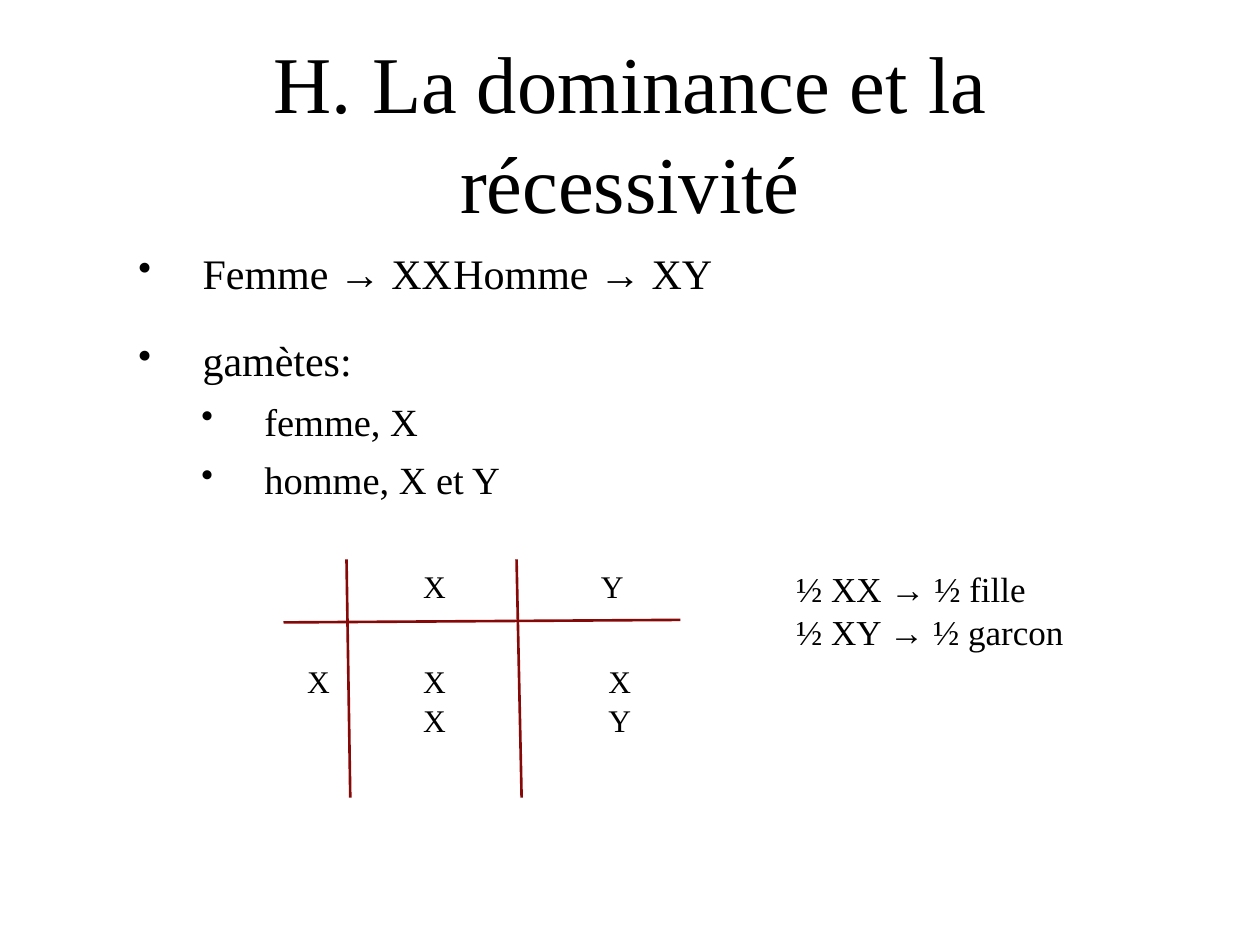
from lxml import etree
from pptx import Presentation
from pptx.dml.color import RGBColor
from pptx.enum.shapes import MSO_CONNECTOR as Connector
from pptx.enum.text import MSO_ANCHOR as Anchor, PP_ALIGN as Align
from pptx.oxml.ns import qn
from pptx.util import Inches, Pt

FONT = "Times New Roman"
BLACK = "000000"
DARK_RED = "860908"


def color(value):
    return RGBColor.from_string(value)


def set_bullet(paragraph, left, hanging):
    properties = paragraph._p.get_or_add_pPr()
    properties.set("marL", str(Inches(left)))
    properties.set("indent", str(-Inches(hanging)))
    etree.SubElement(properties, qn("a:buSzPct")).set("val", "90000")
    etree.SubElement(properties, qn("a:buChar")).set("char", "•")


def format_paragraph(paragraph, size, **formats):
    formats = {"line_spacing": 1.04, **formats}
    for name, value in formats.items():
        setattr(paragraph, name, value)
    for name, value in {"name": FONT, "size": Pt(size)}.items():
        setattr(paragraph.font, name, value)
    paragraph.font.color.rgb = color(BLACK)


def add_frame(slide, left, top, width, height, anchor=Anchor.TOP):
    box = slide.shapes.add_textbox(*map(Inches, (left, top, width, height)))
    frame = box.text_frame
    frame.word_wrap = True
    frame.vertical_anchor = anchor
    return frame


def add_text(slide, place, lines, size, anchor=Anchor.TOP, **formats):
    frame = add_frame(slide, *place, anchor=anchor)
    frame.text = "\n".join(lines)
    for paragraph in frame.paragraphs:
        format_paragraph(paragraph, size, **formats)


def add_bullets(slide, place, items):
    # Left indent, hanging indent, text size and space before, by level
    levels = [(0.51, 0.51, 24, 20), (1, 0.5, 22, 6)]
    frame = add_frame(slide, *place)
    frame.text = "\n".join(text for _, text in items)
    for index, (paragraph, (level, _)) in enumerate(zip(frame.paragraphs, items)):
        left, hanging, size, before = levels[level]
        set_bullet(paragraph, left, hanging)
        format_paragraph(paragraph, size, level=level,
                         space_before=Pt(before if index else 0))


def add_line(slide, *ends):
    line = slide.shapes.add_connector(Connector.STRAIGHT, *map(Inches, ends))
    line.line.color.rgb = color(DARK_RED)
    line.line.width = Pt(1.5)
    etree.SubElement(line._element.spPr, qn("a:effectLst"))


def add_punnett_square(slide):
    top, bottom, row = 4.44, 6.33, 5.19
    # Rules
    add_line(slide, 2.75, top, 2.78, bottom)
    add_line(slide, 2.25, 4.94, 5.4, 4.92)
    add_line(slide, 4.1, top, 4.14, bottom)
    # Gametes, then the two crosses, whose letters stack in narrow boxes
    cells = [("X", 3.26, top, 0.37), ("Y", 4.67, top, 0.37),
             ("X", 2.34, row, 0.37),
             ("XX", 3.26, row, 0.53), ("XY", 4.73, row, 0.53)]
    for text, left, cell_top, width in cells:
        add_text(slide, (left, cell_top, width, 0.4), [text], 18)


def main():
    presentation = Presentation()
    presentation.slide_width = Inches(10)
    presentation.slide_height = Inches(7.5)
    slide = presentation.slides.add_slide(presentation.slide_layouts[6])

    # Gamete list and title
    add_bullets(slide, (1, 1.9, 8, 4.44), [
        (0, "Femme → XX\tHomme → XY"),
        (0, "gamètes:"),
        (1, "femme, X"),
        (1, "homme, X et Y"),
    ])
    add_text(slide, (1, 0.55, 8, 0.95), ["H. La dominance et la récessivité"],
             46, anchor=Anchor.MIDDLE, alignment=Align.CENTER)

    # Cross and its outcome
    add_punnett_square(slide)
    add_text(slide, (6.22, 4.44, 2.78, 0.77),
             ["½ XX → ½ fille", "½ XY → ½ garcon"], 20)

    presentation.save("out.pptx")


if __name__ == "__main__":
    main()
